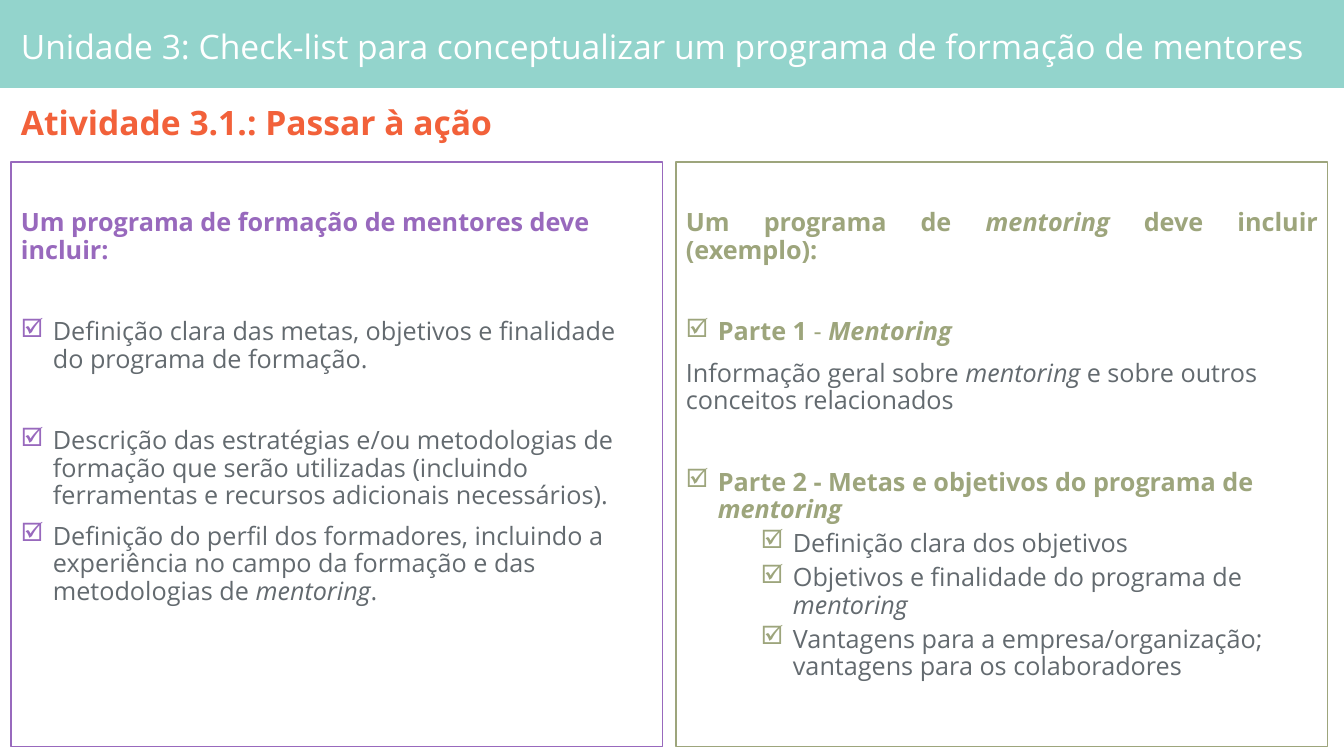
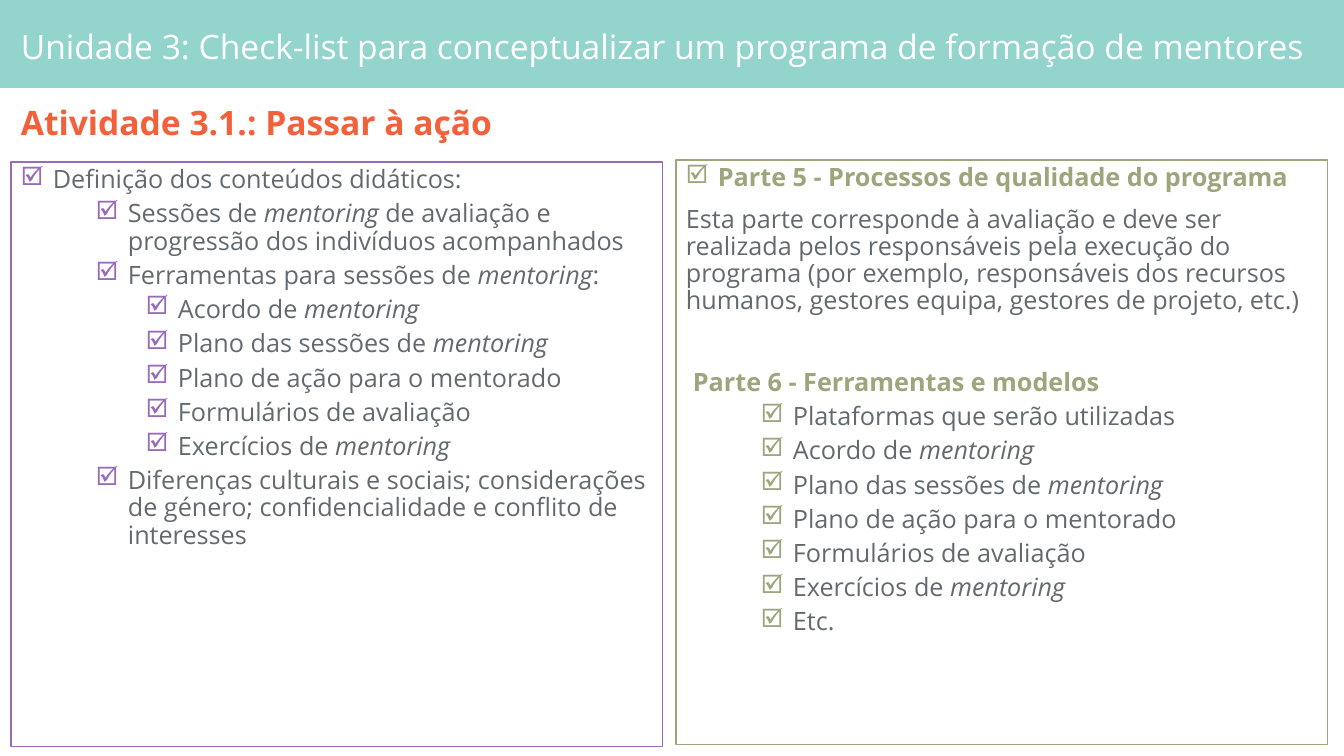
from lxml import etree
from pptx import Presentation
from pptx.dml.color import RGBColor
from pptx.enum.shapes import MSO_SHAPE
from pptx.enum.text import MSO_ANCHOR, PP_ALIGN
from pptx.oxml.ns import qn
from pptx.util import Emu, Pt

RECTANGLE = MSO_SHAPE.RECTANGLE
TOP, MIDDLE = MSO_ANCHOR.TOP, MSO_ANCHOR.MIDDLE
LEFT, JUSTIFY = PP_ALIGN.LEFT, PP_ALIGN.JUSTIFY

WIDTH, HEIGHT = 1344, 756
EMU_PER_PX = 12192000 / WIDTH

FONT, BULLET_FONT = "Open Sans", "Wingdings"
CHECKED_BOX = "þ"
HARD_SPACE = chr(160)
TEAL, ORANGE, WHITE = "93D4CC", "F2613A", "FFFFFF"
PURPLE, OLIVE, GREY = "9869BD", "9DA57C", "636A6F"

MARGIN, CONTENT_WIDTH = 11, 1317
PANEL_WIDTH, PANEL_HEIGHT, PANEL_TOP = 652, 585, 162
RIGHT_PANEL = MARGIN + CONTENT_WIDTH - PANEL_WIDTH
HEADING_INSET = 48
HANGING = 32
LEVEL_MARGINS = (32, 107, 157)
LEVEL_SPACING = (10, 5, 5)
LINE_SPACING = 0.9
SECTION_SPACING = 39

UNIT = "Unidade 3: Check-list para conceptualizar um programa de formação de mentores"
ACTIVITY = "Atividade 3.1.: Passar à ação"


def px(length):
    return Emu(round(length * EMU_PER_PX))


def color(value):
    return RGBColor.from_string(value)


def split_spans(text):
    """Yield (text, bold flipped, italic): _ flips bold, * marks italic."""
    for weight, part in enumerate(text.split("_")):
        for slant, words in enumerate(part.split("*")):
            if words:
                yield words, weight % 2 == 1, slant % 2 == 1


def item(text, level=0, **options):
    return {"text": text, "level": level, **options}


def plain(text, **options):
    return item(text, None, **options)


def items(level, *texts):
    return [item(text, level) for text in texts]


class Deck:
    def __init__(self):
        self.deck = Presentation()
        self.deck.slide_width, self.deck.slide_height = px(WIDTH), px(HEIGHT)
        self.slide = None

    def add_page(self):
        self.slide = self.deck.slides.add_slide(self.deck.slide_layouts[6])
        band = self.rectangle(0, 0, WIDTH, 88)
        band.fill.solid()
        band.fill.fore_color.rgb = color(TEAL)
        band.line.fill.background()
        self.line_of_text(UNIT, 9, 79, WHITE)
        self.line_of_text(ACTIVITY, 95, 60, ORANGE, bold=True)

    def rectangle(self, left, top, width, height):
        box = self.slide.shapes.add_shape(RECTANGLE, px(left), px(top), px(width), px(height))
        box.shadow.inherit = False
        return box

    def line_of_text(self, text, top, height, ink, bold=False):
        box = self.slide.shapes.add_textbox(px(MARGIN), px(top), px(CONTENT_WIDTH), px(height))
        frame = box.text_frame
        frame.word_wrap = True
        frame.vertical_anchor = MIDDLE
        frame.text = text
        para = frame.paragraphs[0]
        para.line_spacing = LINE_SPACING
        self.style(para.runs[0], 24, ink, bold)

    def panel(self, left, accent, entries, top=PANEL_TOP, inset=5):
        box = self.rectangle(left, top, PANEL_WIDTH, PANEL_HEIGHT)
        box.fill.background()
        box.line.color.rgb = color(accent)
        box.line.width = Pt(0.75)
        frame = box.text_frame
        frame.word_wrap = True
        frame.vertical_anchor = TOP
        frame.margin_top = px(inset)
        for index, entry in enumerate(entries):
            para = frame.add_paragraph() if index else frame.paragraphs[0]
            self.entry(para, accent, **entry)

    def entry(self, para, accent, text, level, heading=False, section=False,
              align=LEFT, indent=0):
        para.alignment = align
        para.line_spacing = LINE_SPACING
        para.space_before = Pt(SECTION_SPACING if section else LEVEL_SPACING[level or 0])
        for words, flipped, italic in split_spans(text):
            span = para.add_run()
            span.text = words
            self.style(span, 18, accent if heading else GREY, heading != flipped, italic)
        if level is None:
            self.indent(para, indent, 0)
        else:
            para.level = level
            self.indent(para, LEVEL_MARGINS[level], -HANGING)
            self.check_bullet(para, accent)

    def indent(self, para, margin, first_line):
        properties = para._p.get_or_add_pPr()
        properties.set("marL", str(px(margin)))
        properties.set("indent", str(px(first_line)))

    def check_bullet(self, para, accent):
        properties = para._p.get_or_add_pPr()
        bullet_color = etree.SubElement(properties, qn("a:buClr"))
        etree.SubElement(bullet_color, qn("a:srgbClr"), val=accent)
        etree.SubElement(properties, qn("a:buFont"), typeface=BULLET_FONT,
                         pitchFamily="2", charset="2")
        etree.SubElement(properties, qn("a:buChar"), char=CHECKED_BOX)

    def style(self, span, size, ink, bold=False, italic=False):
        font = span.font
        font.name, font.size = FONT, Pt(size)
        font.bold, font.italic = bold, italic
        font.color.rgb = color(ink)


def build_requirements(deck):
    deck.add_page()
    deck.panel(MARGIN, PURPLE, [
        plain("Um programa de formação de mentores deve incluir:", heading=True),
        item("Definição clara das metas, objetivos e finalidade "
             f"do{HARD_SPACE}programa de formação.", section=True),
        item("Descrição das estratégias e/ou metodologias de formação que serão utilizadas "
             "(incluindo ferramentas e recursos adicionais necessários).", section=True),
        item("Definição do perfil dos formadores, incluindo a experiência no campo da "
             "formação e das metodologias de *mentoring*."),
    ], inset=HEADING_INSET)
    deck.panel(RIGHT_PANEL, OLIVE, [
        plain("Um programa de *mentoring* deve incluir (exemplo):", heading=True, align=JUSTIFY),
        item("Parte 1 _- _*Mentoring*", heading=True, section=True),
        plain("Informação geral sobre *mentoring* e sobre outros conceitos relacionados"),
        item("Parte 2 - Metas e objetivos do programa de *mentoring*",
             heading=True, section=True),
        *items(1, "Definição clara dos objetivos",
               "Objetivos e finalidade do programa de *mentoring*",
               "Vantagens para a empresa/organização; vantagens para os colaboradores"),
    ], inset=HEADING_INSET)


def build_contents(deck):
    tools = ("Acordo de *mentoring*", "Plano das sessões de *mentoring*",
             "Plano de ação para o mentorado", "Formulários de avaliação",
             "Exercícios de *mentoring*")
    deck.add_page()
    deck.panel(MARGIN, PURPLE, [
        item("Definição dos conteúdos didáticos:"),
        *items(1, "Sessões de *mentoring* de avaliação e progressão dos indivíduos acompanhados",
               "Ferramentas para sessões de *mentoring*:"),
        *items(2, *tools),
        item("Diferenças culturais e sociais; considerações de género; "
             "confidencialidade e conflito de interesses", 1),
    ])
    deck.panel(RIGHT_PANEL, OLIVE, [
        item("Parte 5 - Processos de qualidade do programa", heading=True),
        plain("Esta parte corresponde à avaliação e deve ser realizada pelos responsáveis "
              "pela execução do programa (por exemplo, responsáveis dos recursos humanos, "
              "gestores equipa, gestores de projeto, etc.)"),
        plain("Parte 6 - Ferramentas e modelos", heading=True, section=True, indent=7),
        *items(1, "Plataformas que serão utilizadas", *tools, "Etc."),
    ], top=PANEL_TOP - 2)


def main():
    deck = Deck()
    build_requirements(deck)
    build_contents(deck)
    deck.deck.save("out.pptx")


if __name__ == "__main__":
    main()
